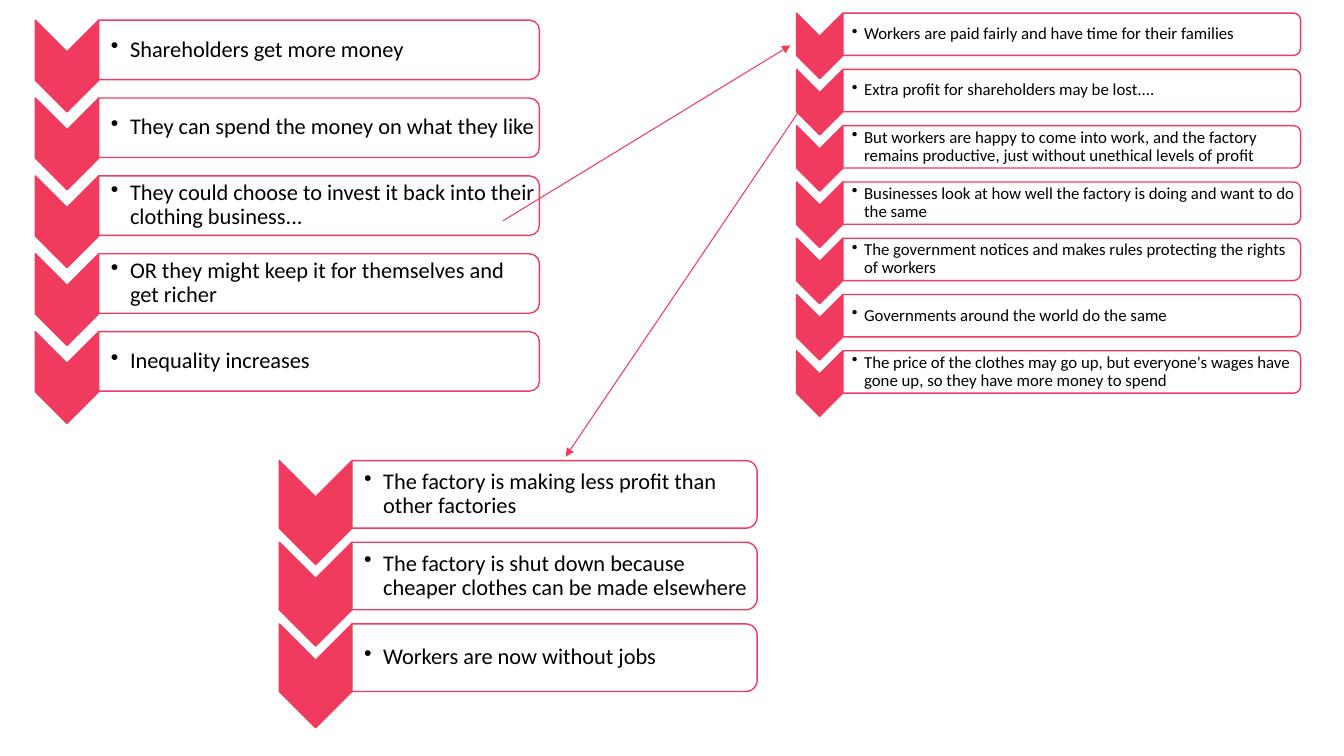
"""Build a slide of three chevron chains showing what follows from profit and fair pay."""
from lxml import etree
from pptx import Presentation
from pptx import util as u
from pptx.dml.color import RGBColor
from pptx.enum import shapes, text
from pptx.oxml import ns

COLOURS = {"accent": "F03B5E", "bar": "FFFFFF", "ink": "000000"}
COLUMNS, ROWS = 1333, 750
PADDING = 3

deck = Presentation()
deck.slide_width, deck.slide_height = u.Inches(13.33), u.Inches(7.5)
cell = deck.slide_width // COLUMNS
page = deck.slides.add_slide(deck.slide_layouts[6])

chains = [
    {"left": 35, "top": 20, "chevron": (63, 91), "bar": (437, 59), "drop": 309,
     "size": 16, "inset": 12, "indent": 0.19, "steps": [
         "Shareholders get more money",
         "They can spend the money on what they like",
         "They could choose to invest it back into their clothing business...",
         "OR they might keep it for themselves and get richer",
         "Inequality increases"]},
    {"left": 790, "top": 13, "chevron": (46, 65), "bar": (454, 42), "drop": 335,
     "size": 12, "inset": 9, "indent": 0.12, "steps": [
         "Workers are paid fairly and have time for their families",
         "Extra profit for shareholders may be lost....",
         "But workers are happy to come into work, and the factory remains productive, "
         "just without unethical levels of profit",
         "Businesses look at how well the factory is doing and want to do the same",
         "The government notices and makes rules protecting the rights of workers",
         "Governments around the world do the same",
         "The price of the clothes may go up, but everyone's wages have gone up, "
         "so they have more money to spend"]},
    {"left": 277, "top": 457, "chevron": (72, 103), "bar": (402, 67), "drop": 162,
     "size": 16, "inset": 12, "indent": 0.19, "steps": [
         "The factory is making less profit than other factories",
         "The factory is shut down because cheaper clothes can be made elsewhere",
         "Workers are now without jobs"]},
]
arrows = [((499, 219), (784, 45)), ((796, 105), (561, 453))]


def add_turned(group, preset, left, top, size, fill):
    """Add a shape turned a quarter clockwise that covers the given area."""
    width, height = size
    shift = (width - height) / 2
    area = (left + shift, top - shift, height, width)
    shape = group.shapes.add_shape(preset, *(round(length * cell) for length in area))
    shape.rotation = 90
    shape.shadow.inherit = False
    shape.fill.solid()
    shape.fill.fore_color.rgb = RGBColor.from_string(COLOURS[fill])
    shape.line.color.rgb = RGBColor.from_string(COLOURS["accent"])
    shape.line.width = u.Pt(1)
    return shape


def add_step_text(group, chain, left, top, wording):
    """Add one bulleted step inside its bar."""
    width, height = chain["bar"]
    area = (left, top + PADDING, width - PADDING, height - 2 * PADDING)
    box = group.shapes.add_textbox(*(round(length * cell) for length in area))
    frame = box.text_frame
    frame.word_wrap = True
    frame.vertical_anchor = text.MSO_ANCHOR.MIDDLE
    frame.margin_left = chain["inset"] * cell
    frame.margin_top = frame.margin_right = frame.margin_bottom = cell
    para = frame.paragraphs[0]
    para.level = 1
    para.line_spacing = 0.9
    properties = para._p.get_or_add_pPr()
    indent = u.Inches(chain["indent"])
    properties.set("marL", str(indent))
    properties.set("indent", str(-indent))
    etree.SubElement(properties, ns.qn("a:buChar")).set("char", "•")
    span = para.add_run()
    span.text = wording
    span.font.name = "Calibri"
    span.font.size = u.Pt(chain["size"])
    span.font.color.rgb = RGBColor.from_string(COLOURS["ink"])


for chain in chains:
    group = page.shapes.add_group_shape()
    pitch = chain["drop"] / (len(chain["steps"]) - 1)
    bar_left = chain["left"] + chain["chevron"][0]
    for index, wording in enumerate(chain["steps"]):
        top = chain["top"] + index * pitch
        add_turned(group, shapes.MSO_SHAPE.CHEVRON, chain["left"], top,
                   chain["chevron"], "accent")
        bar = add_turned(group, shapes.MSO_SHAPE.ROUND_2_SAME_RECTANGLE, bar_left, top,
                         chain["bar"], "bar")
        bar_colour = bar._element.spPr.find(ns.qn("a:solidFill"))[0]
        etree.SubElement(bar_colour, ns.qn("a:alpha")).set("val", "90000")
        add_step_text(group, chain, bar_left, top, wording)

for start, end in arrows:
    arrow = page.shapes.add_connector(
        shapes.MSO_CONNECTOR.STRAIGHT, *(length * cell for length in start + end))
    arrow.line.color.rgb = RGBColor.from_string(COLOURS["accent"])
    arrow.line.width = u.Pt(0.75)
    etree.SubElement(arrow.line._get_or_add_ln(), ns.qn("a:tailEnd")).set("type", "triangle")
    etree.SubElement(arrow._element.spPr, ns.qn("a:effectLst"))

deck.save("out.pptx")
